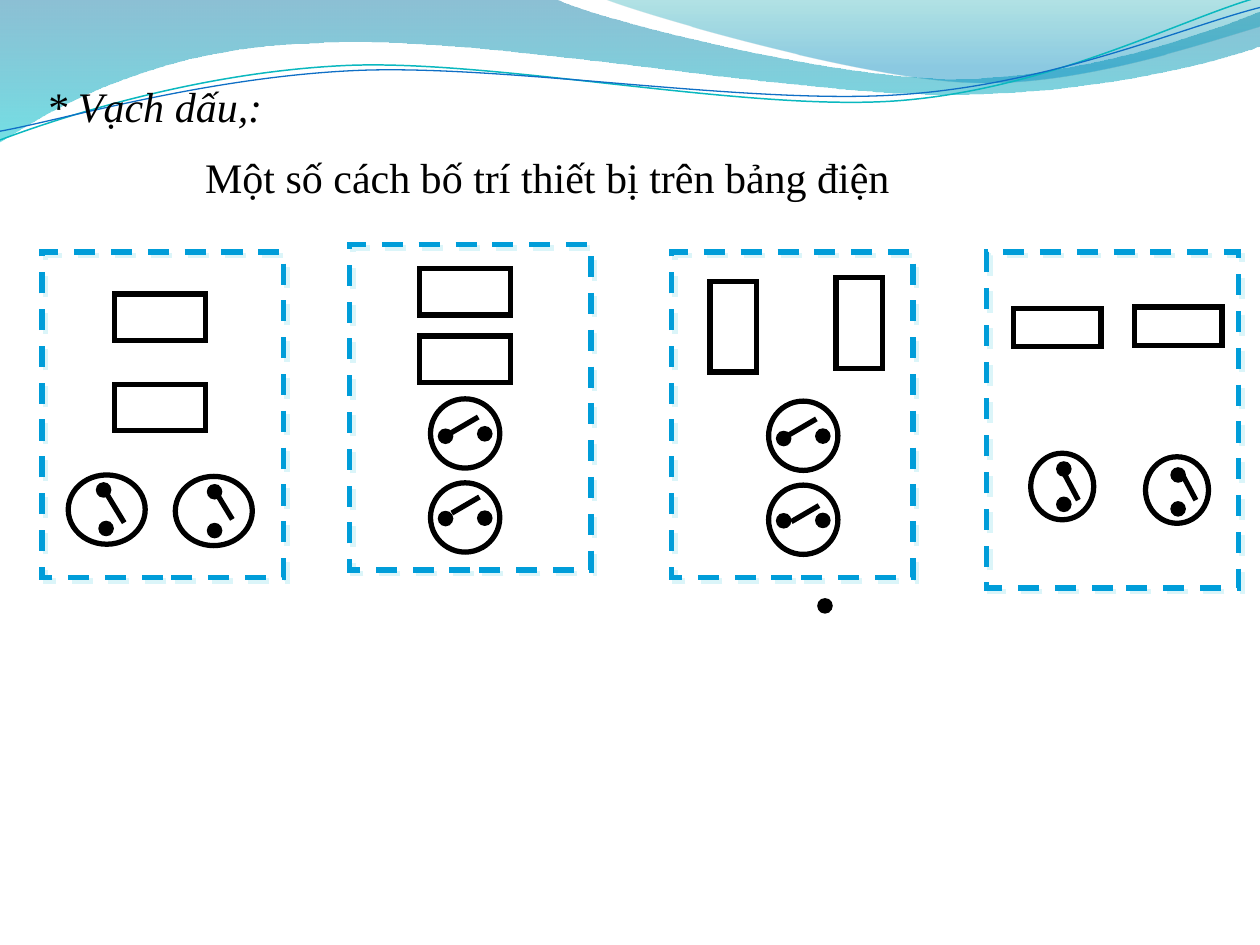
import pptx
import pptx.dml.color
import pptx.enum.dml
import pptx.enum.shapes
import pptx.enum.text
import pptx.oxml.ns
import pptx.util
import lxml.etree

Pt = pptx.util.Pt
RGBColor = pptx.dml.color.RGBColor
SHAPE = pptx.enum.shapes.MSO_SHAPE
qn = pptx.oxml.ns.qn

BLACK = RGBColor(0x00, 0x00, 0x00)
PANEL_BLUE = RGBColor(0x00, 0x9D, 0xD9)
WAVE_TEAL = RGBColor(0x0A, 0xB8, 0xBF)
WAVE_BLUE = RGBColor(0x0F, 0x6F, 0xC6)
DEEP_BLUE = RGBColor(0x00, 0x74, 0xA1)
AQUA = RGBColor(0x00, 0xC6, 0xCF)
SEA_GREEN = RGBColor(0x00, 0xA1, 0xA9)
SKY_BLUE = RGBColor(0x00, 0x8B, 0xBF)
PANEL_SHADOW = RGBColor(0xDB, 0xF5, 0xF9)

FONT = "Times New Roman"
STROKE = 3
PIN = 5.8
UNITS = 100
WIDE_LEVER = (9.6, 15.8)
SLIM_LEVER = (8, 15.1)
FLAT_LEVER = (15.8, -9.2)
UPRIGHT_PINS = [(0.4, -11), (0.4, 11.2)]
FLAT_PINS = [(-11.2, 0.6), (11.2, 0.4)]
TILTED_PINS = [(-11.2, 1.6), (11.2, 0.2)]

LEFT_WAVE = [(0, 0), (317, -0.7), (343, 12, 478, 45, 546, 45), (614, 45, 690, 19, 720, 6.5),
             (720.7, 26), (708, 32, 626, 55, 537, 54), (448, 54, 275, 20, 185, 24.5),
             (93, 26, 33, 60, -0.7, 81.4)]
RIGHT_WAVE = [(345, -0.7), (366, 8, 491, 44.6, 554, 46.8), (616, 49.7, 692, 23, 720, 15), (720, 0)]
TEAL_LINE = [(0, 80), (34.5, 67, 114, 41, 199, 37.4), (284, 34, 427, 64, 513, 57.6),
             (600, 51, 675, 10.8, 718.6, -1.4)]
BLUE_LINE = [(0, 75), (34, 69, 118, 44, 204, 40.3), (290, 36.7, 430, 60.5, 516, 54),
             (602, 48, 677.5, 15, 720, 4.3)]

PANELS = [
    {"box": (24, 144, 138, 186),
     "fuses": [(41.6, 24, 52, 26.6), (41.6, 75.6, 52, 26.6)],
     "outlets": [(37, 147.2, 44, 39.6, [(-1.8, -11.2), (-0.4, 10.8)], (0.4, -8.3), WIDE_LEVER),
                 (98.2, 148, 44, 39.6, UPRIGHT_PINS, (1, -11), WIDE_LEVER)]},
    {"box": (199.8, 139.7, 138, 186),
     "fuses": [(39.8, 13.7, 52, 26.6), (39.8, 52.3, 52, 26.6)],
     "outlets": [(66, 108, 39.6, 39.6, TILTED_PINS, (-8.3, -0.2), FLAT_LEVER),
                 (66, 156, 39.6, 39.6, FLAT_PINS, (-7.6, -2.5), FLAT_LEVER)]},
    {"box": (383.8, 144, 138, 186),
     "fuses": [(22, 16.7, 26.6, 52), (94, 14.6, 26.6, 52)],
     "outlets": [(75.2, 105, 39.6, 39.6, TILTED_PINS, (-8.3, -0.4), FLAT_LEVER),
                 (75.2, 153, 39.6, 39.6, FLAT_PINS, (-6.8, 1.1), FLAT_LEVER)]},
    {"box": (563.8, 144, 144, 192),
     "fuses": [(15.4, 32.2, 50, 22), (84.6, 31.5, 50, 22)],
     "outlets": [(43.2, 134, 36, 38, [(0.9, -10), (0.9, 10.2)], (1.2, -7.3), SLIM_LEVER),
                 (108.8, 136, 36, 38, [(0.6, -8.6), (0.6, 10.8)], (2.8, -9.3), SLIM_LEVER)]},
]


def add_outline(slide, segments, close):
    start, *rest = segments
    builder = slide.shapes.build_freeform(*(v * UNITS for v in start), scale=Pt(1) / UNITS)
    builder.add_line_segments([[v * UNITS for v in part[-2:]] for part in rest], close=close)
    outline = builder.convert_to_shape()
    outline.shadow.inherit = False
    origin = next(outline.element.iter(qn("a:moveTo")))[0]
    left = int(origin.get("x")) - start[0] * UNITS
    top = int(origin.get("y")) - start[1] * UNITS
    edges = list(outline.element.iter(qn("a:lnTo")))
    for edge, part in zip(edges, rest):
        if len(part) == 6:
            curve = lxml.etree.Element(qn("a:cubicBezTo"))
            for x, y in (part[:2], part[2:4]):
                lxml.etree.SubElement(curve, qn("a:pt"), x=str(round(left + x * UNITS)),
                                      y=str(round(top + y * UNITS)))
            curve.append(edge[0])
            edge.getparent().replace(edge, curve)
    return outline


def add_wave_band(slide, segments, stops):
    band = add_outline(slide, segments, True)
    band.line.fill.background()
    band.fill.gradient()
    band.fill.gradient_angle = 270
    for stop, (position, color, _) in zip(band.fill.gradient_stops, stops):
        stop.position = position
        stop.color.rgb = color
    for tint, (_, _, opacity) in zip(band.element.spPr.iter(qn("a:srgbClr")), stops):
        lxml.etree.SubElement(tint, qn("a:alpha")).set("val", str(opacity * 1000))


def add_wave_line(slide, segments, color, width):
    wave = add_outline(slide, segments, False)
    wave.fill.background()
    wave.line.color.rgb = color
    wave.line.width = Pt(width)


def add_waves(slide):
    add_wave_band(slide, LEFT_WAVE, [(0, DEEP_BLUE, 45), (1, AQUA, 55)])
    add_wave_band(slide, RIGHT_WAVE, [(0, SEA_GREEN, 30), (0.8, SKY_BLUE, 45)])
    add_wave_line(slide, TEAL_LINE, WAVE_TEAL, 0.85)
    add_wave_line(slide, BLUE_LINE, WAVE_BLUE, 0.75)


def add_figure(slide, kind, box, color=BLACK, filled=False):
    figure = slide.shapes.add_shape(kind, *map(Pt, box))
    figure.shadow.inherit = False
    if filled:
        figure.fill.solid()
        figure.fill.fore_color.rgb = color
    else:
        figure.fill.background()
    figure.line.color.rgb = color
    figure.line.width = Pt(STROKE)
    stroke = figure.element.spPr.find(qn("a:ln"))
    lxml.etree.SubElement(stroke, qn("a:miter"), lim="800000")
    return figure


def add_pin(slide, x, y):
    box = (x - PIN / 2, y - PIN / 2, PIN, PIN)
    add_figure(slide, SHAPE.FLOWCHART_CONNECTOR, box, filled=True)


def add_lever(slide, x, y, reach):
    lever = slide.shapes.add_connector(pptx.enum.shapes.MSO_CONNECTOR.STRAIGHT,
                                       Pt(x), Pt(y), Pt(x + reach[0]), Pt(y + reach[1]))
    lever.line.color.rgb = BLACK
    lever.line.width = Pt(STROKE)
    lxml.etree.SubElement(lever.element.spPr, qn("a:effectLst"))


def add_outlet(slide, x, y, width, height, pins, hinge, reach):
    add_figure(slide, SHAPE.OVAL, (x - width / 2, y - height / 2, width, height))
    for across, down in pins:
        add_pin(slide, x + across, y + down)
    add_lever(slide, x + hinge[0], y + hinge[1], reach)


def add_panel(slide, box, fuses, outlets):
    left, top = box[:2]
    board = add_figure(slide, SHAPE.RECTANGLE, box, PANEL_BLUE)
    board.line.dash_style = pptx.enum.dml.MSO_LINE.DASH
    effects = board.element.spPr.find(qn("a:effectLst"))
    shadow = lxml.etree.SubElement(effects, qn("a:outerShdw"), blurRad="0",
                                   dist=str(Pt(2.8)), dir="2700000", algn="ctr", rotWithShape="0")
    lxml.etree.SubElement(shadow, qn("a:srgbClr"), val=str(PANEL_SHADOW))
    for x, y, width, height in fuses:
        add_figure(slide, SHAPE.RECTANGLE, (left + x, top + y, width, height))
    for x, y, *details in outlets:
        add_outlet(slide, left + x, top + y, *details)


def write_heading(heading, box, text, italic=False):
    heading.left, heading.top, heading.width, heading.height = map(Pt, box)
    frame = heading.text_frame
    frame.text = text
    frame.word_wrap = True
    frame.auto_size = pptx.enum.text.MSO_AUTO_SIZE.NONE
    frame.vertical_anchor = pptx.enum.text.MSO_ANCHOR.TOP
    frame.paragraphs[0].alignment = pptx.enum.text.PP_ALIGN.LEFT
    font = frame.paragraphs[0].runs[0].font
    font.name = FONT
    font.size = Pt(24)
    font.italic = italic
    font.color.rgb = BLACK


def main():
    deck = pptx.Presentation()
    deck.slide_width, deck.slide_height = Pt(720), Pt(540)
    slide = deck.slides.add_slide(deck.slide_layouts[5])
    add_waves(slide)
    write_heading(slide.shapes.title, (110, 83, 516, 36),
                  "Một số cách bố trí thiết bị trên bảng điện")
    for panel in PANELS:
        add_panel(slide, **panel)
    add_pin(slide, 471.4, 346.2)
    step_box = (19.5, 42.5, 266, 36)
    write_heading(slide.shapes.add_textbox(*map(Pt, step_box)), step_box,
                  "* Vạch dấu,:", italic=True)
    deck.save("out.pptx")


if __name__ == "__main__":
    main()
